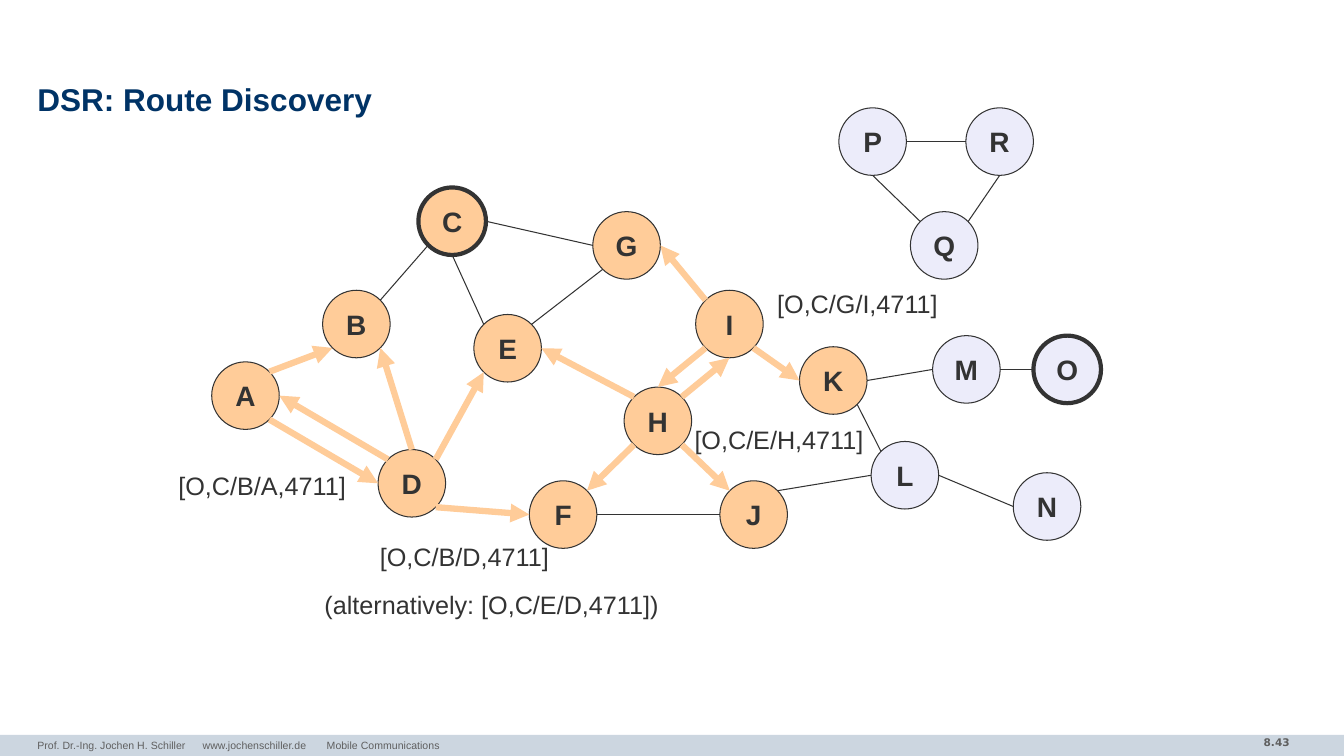
from math import cos, radians, sin

from pptx import Presentation
from pptx.dml.color import RGBColor
from pptx.enum.shapes import MSO_CONNECTOR, MSO_SHAPE
from pptx.enum.text import MSO_ANCHOR, PP_ALIGN
from pptx.oxml.ns import qn
from pptx.util import Inches, Pt
from lxml import etree

OVAL, BAR = MSO_SHAPE.OVAL, MSO_SHAPE.RECTANGLE
STRAIGHT = MSO_CONNECTOR.STRAIGHT
LEFT, CENTER, RIGHT = PP_ALIGN.LEFT, PP_ALIGN.CENTER, PP_ALIGN.RIGHT
TOP, MIDDLE = MSO_ANCHOR.TOP, MSO_ANCHOR.MIDDLE

INK, NAVY, GRAY = "333333", "003366", "5F5F5F"
REACHED, UNREACHED, FOOTER_BLUE = "FFCC99", "ECECFA", "CCD6E0"
NODE_SIZE = 0.67
ENDPOINTS = "CO"  # source and destination of the route

REACHED_NODES = {
    "A": (2.1, 3.59), "B": (3.2, 2.88), "C": (4.15, 1.86), "D": (3.75, 4.46),
    "E": (4.7, 3.12), "F": (5.25, 4.77), "G": (5.88, 2.1), "H": (6.19, 3.84),
    "I": (6.9, 2.88), "J": (7.14, 4.77), "K": (7.93, 3.44),
}
UNREACHED_NODES = {
    "L": (8.64, 4.38), "M": (9.25, 3.33), "N": (10.05, 4.69), "O": (10.25, 3.33),
    "P": (8.32, 1.07), "Q": (9.03, 2.1), "R": (9.58, 1.07),
}
NODES = REACHED_NODES | UNREACHED_NODES
COMPASS = {side: radians(45 * i)
           for i, side in enumerate(["E", "SE", "S", "SW", "W", "NW", "N", "NE"])}

# Each link: node, side it leaves from, node, side it arrives at
LINKS = [
    "B NE C SW", "E NW C S", "G W C E", "G SW E NE", "L W J NE", "L NW K SE",
    "M W K E", "N W L E", "O W M E", "P S Q NW", "P E R W", "Q NE R S", "J W F E",
]
BROADCASTS = [
    "A NE B SW", "A SE D W", "D N B SE", "D NW A E", "D NE E SW", "D SE F W",
    "H NW E E", "H SW F NE", "H SE J NW", "H NE I S", "I NW G E", "I SW H N",
    "I SE K W",
]
ROUTE_RECORDS = [
    ("[O,C/G/I,4711]", 7.61, 2.81, 1.81),
    ("[O,C/B/A,4711]", 1.67, 4.62, 1.88),
    ("[O,C/B/D,4711]", 3.67, 5.32, 1.9),
    ("[O,C/E/H,4711]", 6.79, 4.16, 1.9),
    ("(alternatively: [O,C/E/D,4711])", 3.12, 5.8, 3.53),
]


def color(hex_code):
    return RGBColor.from_string(hex_code)


def write(frame, text, size, ink, bold=False, align=LEFT, font="Arial"):
    frame.text = text
    paragraph = frame.paragraphs[0]
    paragraph.alignment = align
    run_font = paragraph.runs[0].font
    run_font.name, run_font.size, run_font.bold = font, Pt(size), bold
    run_font.color.rgb = color(ink)
    return paragraph


def add_text_frame(slide, left, top, width, height, insets=(0.1, 0.05),
                   wrap=True, anchor=TOP):
    """Add a text box; insets are (sides, top and bottom)."""
    box = slide.shapes.add_textbox(Inches(left), Inches(top),
                                   Inches(width), Inches(height))
    frame = box.text_frame
    frame.word_wrap = wrap
    frame.vertical_anchor = anchor
    frame.margin_left = frame.margin_right = Inches(insets[0])
    frame.margin_top = frame.margin_bottom = Inches(insets[1])
    return frame


def add_tab_stops(paragraph, positions):
    tab_list = etree.SubElement(paragraph._p.get_or_add_pPr(), qn("a:tabLst"))
    for position in positions:
        etree.SubElement(tab_list, qn("a:tab"), pos=str(Inches(position)), algn="l")


def add_filled_shape(slide, preset, left, top, width, height, fill):
    shape = slide.shapes.add_shape(preset, Inches(left), Inches(top),
                                   Inches(width), Inches(height))
    shape.shadow.inherit = False
    shape.fill.solid()
    shape.fill.fore_color.rgb = color(fill)
    shape.line.fill.background()
    return shape


def add_node(slide, letter):
    fill = REACHED if letter in REACHED_NODES else UNREACHED
    node = add_filled_shape(slide, OVAL, *NODES[letter], NODE_SIZE, NODE_SIZE, fill)
    node.line.color.rgb = color(INK)
    node.line.width = Pt(3 if letter in ENDPOINTS else 0.75)
    node.text_frame.word_wrap = False
    node.text_frame.vertical_anchor = MIDDLE
    write(node.text_frame, letter, 20, INK, bold=True, align=CENTER)


def rim_point(letter, side):
    """Point on a node's circle in the given compass direction."""
    left, top = NODES[letter]
    radius = NODE_SIZE / 2
    return (Inches(left + radius + radius * cos(COMPASS[side])),
            Inches(top + radius + radius * sin(COMPASS[side])))


def add_link(slide, link, ink, width, arrow=False):
    start, start_side, end, end_side = link.split()
    line = slide.shapes.add_connector(STRAIGHT, *rim_point(start, start_side),
                                      *rim_point(end, end_side))
    line.line.color.rgb = color(ink)
    line.line.width = Pt(width)
    if arrow:
        etree.SubElement(line.line._get_or_add_ln(), qn("a:tailEnd"), type="triangle")
    etree.SubElement(line._element.spPr, qn("a:effectLst"))


def add_footer(slide):
    add_filled_shape(slide, BAR, 0, 7.29, 13.33, 0.21, FOOTER_BLUE)
    write(add_text_frame(slide, 11.1, 7.25, 1.79, 0.26), "8.43", 7.5, GRAY,
          bold=True, align=RIGHT, font="DejaVu Sans")
    credit = write(add_text_frame(slide, 0.37, 7.28, 8.72, 0.22, (0, 0.05)),
                   "Prof. Dr.-Ing. Jochen H. Schiller\twww.jochenschiller.de"
                   "\tMobile Communications", 7.5, GRAY)
    add_tab_stops(credit, [1.64, 2.87])


def main():
    prs = Presentation()
    prs.slide_width, prs.slide_height = Inches(13.33), Inches(7.5)
    slide = prs.slides.add_slide(prs.slide_layouts[6])

    add_footer(slide)
    title = write(add_text_frame(slide, 0.37, 0.78, 12.6, 0.47, (0, 0), anchor=MIDDLE),
                  "DSR: Route Discovery", 22.5, NAVY, bold=True)
    title.line_spacing = 0.85

    for letter in NODES:
        add_node(slide, letter)
    for link in LINKS:
        add_link(slide, link, INK, 0.75)
    for link in BROADCASTS:
        add_link(slide, link, REACHED, 4.5, arrow=True)
    for record, left, top, width in ROUTE_RECORDS:
        write(add_text_frame(slide, left, top, width, 0.4, wrap=False), record, 18, INK)

    prs.save("out.pptx")


if __name__ == "__main__":
    main()
